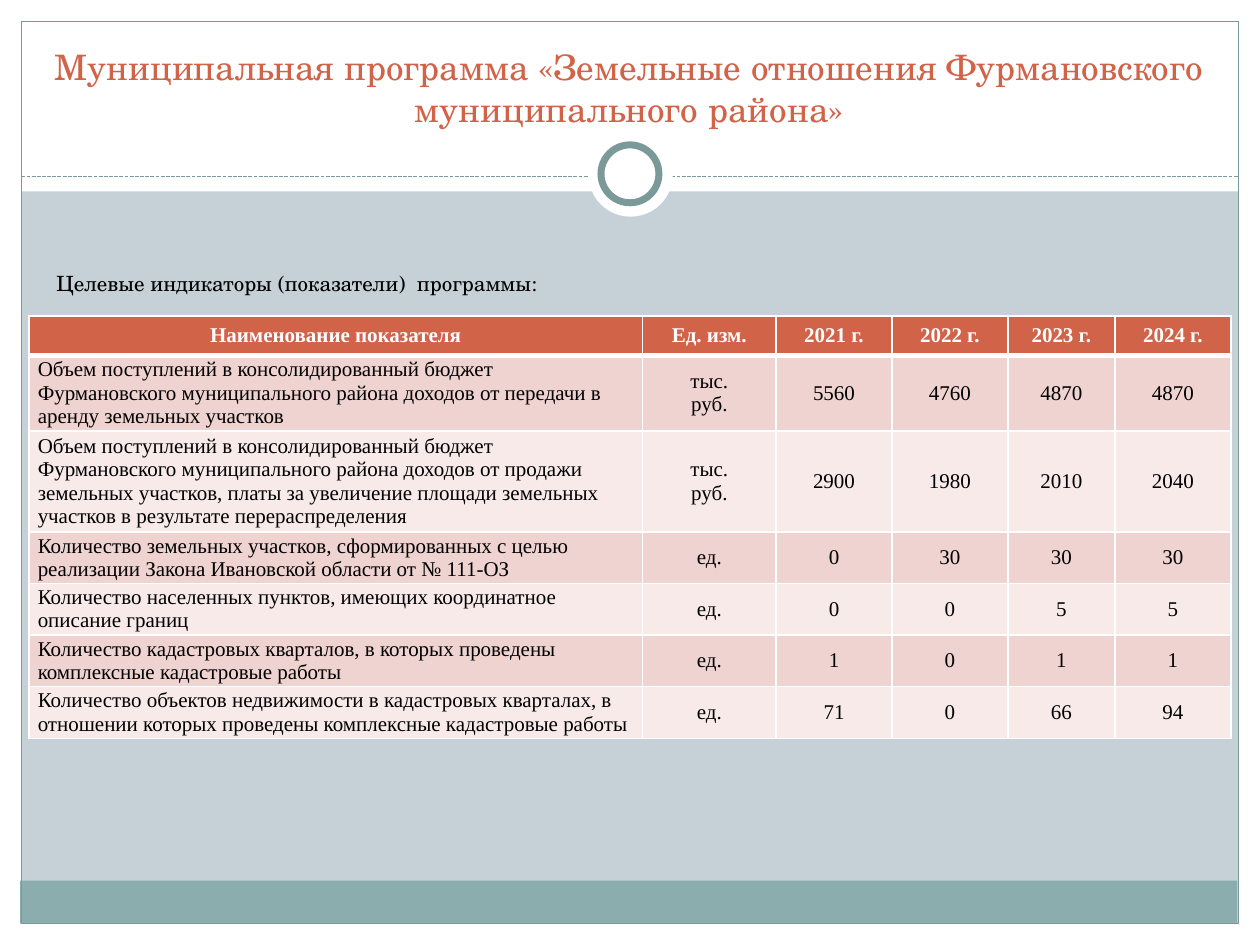
from dataclasses import dataclass
from typing import NamedTuple

from lxml import etree
from pptx import Presentation
from pptx.dml.color import RGBColor
from pptx.enum import dml, shapes, text
from pptx.oxml.ns import qn
from pptx.util import Inches, Pt


@dataclass(frozen=True)
class Theme:
    background: str = "C5D1D7"
    white: str = "FFFFFF"
    black: str = "000000"
    accent: str = "D16349"
    frame: str = "7C999A"
    footer: str = "8CADAE"
    bands: tuple[str, str] = ("EED3D0", "F7EAE9")
    display_font: str = "TeX Gyre Schola"
    table_font: str = "Times New Roman"
    title_size: float = 20
    body_size: float = 12


class Panel(NamedTuple):
    kind: shapes.MSO_SHAPE
    left: float
    top: float
    width: float
    height: float
    fill: str | None = None
    line: str | None = None
    weight: float = 0.75


class Indicator(NamedTuple):
    name: str
    unit: str
    values: tuple[int, ...]
    height: float = 0.41


THEME = Theme()
RECT, OVAL = shapes.MSO_SHAPE.RECTANGLE, shapes.MSO_SHAPE.OVAL

BANDS = [
    Panel(RECT, 0, 7.33, 10, 0.17, THEME.white),
    Panel(RECT, 0, 0, 10, 1.52, THEME.white),
    Panel(RECT, 0, 0, 0.17, 7.5, THEME.white),
    Panel(RECT, 9.83, 0, 0.17, 7.5, THEME.white),
    Panel(RECT, 0.16, 6.99, 9.66, 0.34, THEME.footer),
    Panel(RECT, 0.17, 0.17, 9.66, 7.16, line=THEME.frame),
]
RING = [
    Panel(OVAL, 4.67, 1.05, 0.67, 0.67, THEME.white),
    Panel(OVAL, 4.77, 1.15, 0.46, 0.46, THEME.white, THEME.frame, 4),
]

HEADERS = ["Наименование показателя", "Ед. изм.",
           *(f"{year} г." for year in range(2021, 2025))]
COLUMN_WIDTHS = [4.87, 1.06, 0.92, 0.92, 0.85, 0.92]
HEADER_HEIGHT = 0.31
INDICATORS = [
    Indicator("Объем поступлений в консолидированный бюджет Фурмановского муниципального "
              "района доходов от передачи в аренду земельных участков",
              "тыс.\nруб.", (5560, 4760, 4870, 4870), 0.55),
    Indicator("Объем поступлений в консолидированный бюджет Фурмановского муниципального "
              "района доходов от продажи земельных участков, платы за увеличение площади "
              "земельных участков в результате перераспределения",
              "тыс.\nруб.", (2900, 1980, 2010, 2040), 0.74),
    Indicator("Количество земельных участков, сформированных с целью реализации Закона "
              "Ивановской области от № 111-ОЗ", "ед.", (0, 30, 30, 30)),
    Indicator("Количество населенных пунктов, имеющих координатное описание границ",
              "ед.", (0, 0, 5, 5)),
    Indicator("Количество кадастровых кварталов, в которых проведены комплексные "
              "кадастровые работы", "ед.", (1, 0, 1, 1)),
    Indicator("Количество объектов недвижимости в кадастровых кварталах, в отношении "
              "которых проведены комплексные кадастровые работы", "ед.", (71, 0, 66, 94)),
]


def rgb(color: str) -> RGBColor:
    return RGBColor.from_string(color)


def style_paragraph(p, font: str, size: float, color: str, align, bold: bool = False) -> None:
    p.alignment = align
    p.font.name, p.font.size, p.font.bold = font, Pt(size), bold
    p.font.color.rgb = rgb(color)


def add_panel(slide, panel: Panel) -> None:
    sp = slide.shapes.add_shape(panel.kind, Inches(panel.left), Inches(panel.top),
                                Inches(panel.width), Inches(panel.height))
    sp.shadow.inherit = False
    if panel.fill:
        sp.fill.solid()
        sp.fill.fore_color.rgb = rgb(panel.fill)
    else:
        sp.fill.background()
    if panel.line:
        sp.line.color.rgb = rgb(panel.line)
        sp.line.width = Pt(panel.weight)
    else:
        sp.line.fill.background()


def add_divider(slide) -> None:
    line = slide.shapes.add_connector(shapes.MSO_CONNECTOR.STRAIGHT, Inches(0.17), Inches(1.4),
                                      Inches(9.83), Inches(1.4))
    line.line.color.rgb = rgb(THEME.frame)
    line.line.width = Pt(0.75)
    line.line.dash_style = dml.MSO_LINE.SQUARE_DOT
    etree.SubElement(line._element.spPr, qn("a:effectLst"))


def add_text(slide, content: str, box: tuple[float, float, float, float], size: float,
             color: str, align, anchor, side: float, top: float = 0.05) -> None:
    """Add a one-paragraph text box; side and top are insets in inches."""
    tf = slide.shapes.add_textbox(*map(Inches, box)).text_frame
    tf.word_wrap = True
    tf.vertical_anchor = anchor
    tf.margin_left = tf.margin_right = Inches(side)
    tf.margin_top = Inches(top)
    tf.text = content
    style_paragraph(tf.paragraphs[0], THEME.display_font, size, color, align)


def set_borders(cell, top: float, bottom: float) -> None:
    """Draw white cell borders; side borders are 1 pt."""
    tc_pr = cell._tc.get_or_add_tcPr()
    for side, width in (("L", 1), ("R", 1), ("T", top), ("B", bottom)):
        ln = etree.SubElement(tc_pr, qn(f"a:ln{side}"), w=str(Pt(width)))
        fill = etree.SubElement(ln, qn("a:solidFill"))
        etree.SubElement(fill, qn("a:srgbClr"), val=THEME.white)


def fill_cell(cell, content: str, row: int, column: int) -> None:
    header = row == 0
    set_borders(cell, top=3 if row == 1 else 1, bottom=3 if header else 1)
    cell.fill.solid()
    cell.fill.fore_color.rgb = rgb(THEME.accent if header else THEME.bands[(row - 1) % 2])
    cell.vertical_anchor = text.MSO_ANCHOR.MIDDLE
    cell.margin_left = cell.margin_right = Inches(0.07)
    cell.margin_top = cell.margin_bottom = 0
    cell.text = content
    left = column == 0 and not header
    for p in cell.text_frame.paragraphs:
        style_paragraph(p, THEME.table_font, THEME.body_size,
                        THEME.white if header else THEME.black,
                        text.PP_ALIGN.LEFT if left else text.PP_ALIGN.CENTER, header)
        if header:
            p.line_spacing = 0.95


def add_indicator_table(slide) -> None:
    rows = [HEADERS, *([i.name, i.unit, *map(str, i.values)] for i in INDICATORS)]
    heights = [HEADER_HEIGHT, *(i.height for i in INDICATORS)]
    table = slide.shapes.add_table(len(rows), len(HEADERS), Inches(0.23), Inches(2.51),
                                   Inches(sum(COLUMN_WIDTHS)), Inches(sum(heights))).table
    table.horz_banding = False
    for column, width in zip(table.columns, COLUMN_WIDTHS):
        column.width = Inches(width)
    for r, (contents, height) in enumerate(zip(rows, heights)):
        table.rows[r].height = Inches(height)
        for c, content in enumerate(contents):
            fill_cell(table.cell(r, c), content, r, c)


def main() -> None:
    prs = Presentation()
    prs.slide_width, prs.slide_height = Inches(10), Inches(7.5)
    slide = prs.slides.add_slide(prs.slide_layouts[6])
    slide.background.fill.solid()
    slide.background.fill.fore_color.rgb = rgb(THEME.background)

    for panel in BANDS:
        add_panel(slide, panel)
    add_divider(slide)
    for panel in RING:
        add_panel(slide, panel)
    add_text(slide, "Муниципальная программа «Земельные отношения Фурмановского "
             "муниципального района»", (0.33, 0.25, 9.33, 0.83), THEME.title_size,
             THEME.accent, text.PP_ALIGN.CENTER, text.MSO_ANCHOR.BOTTOM, side=0.05)
    add_text(slide, "Целевые индикаторы (показатели)  программы:", (0.35, 1.86, 9.3, 0.39),
             THEME.body_size, THEME.black, text.PP_ALIGN.LEFT, text.MSO_ANCHOR.TOP,
             side=0.1, top=0.29)
    add_indicator_table(slide)
    prs.save("out.pptx")


if __name__ == "__main__":
    main()
